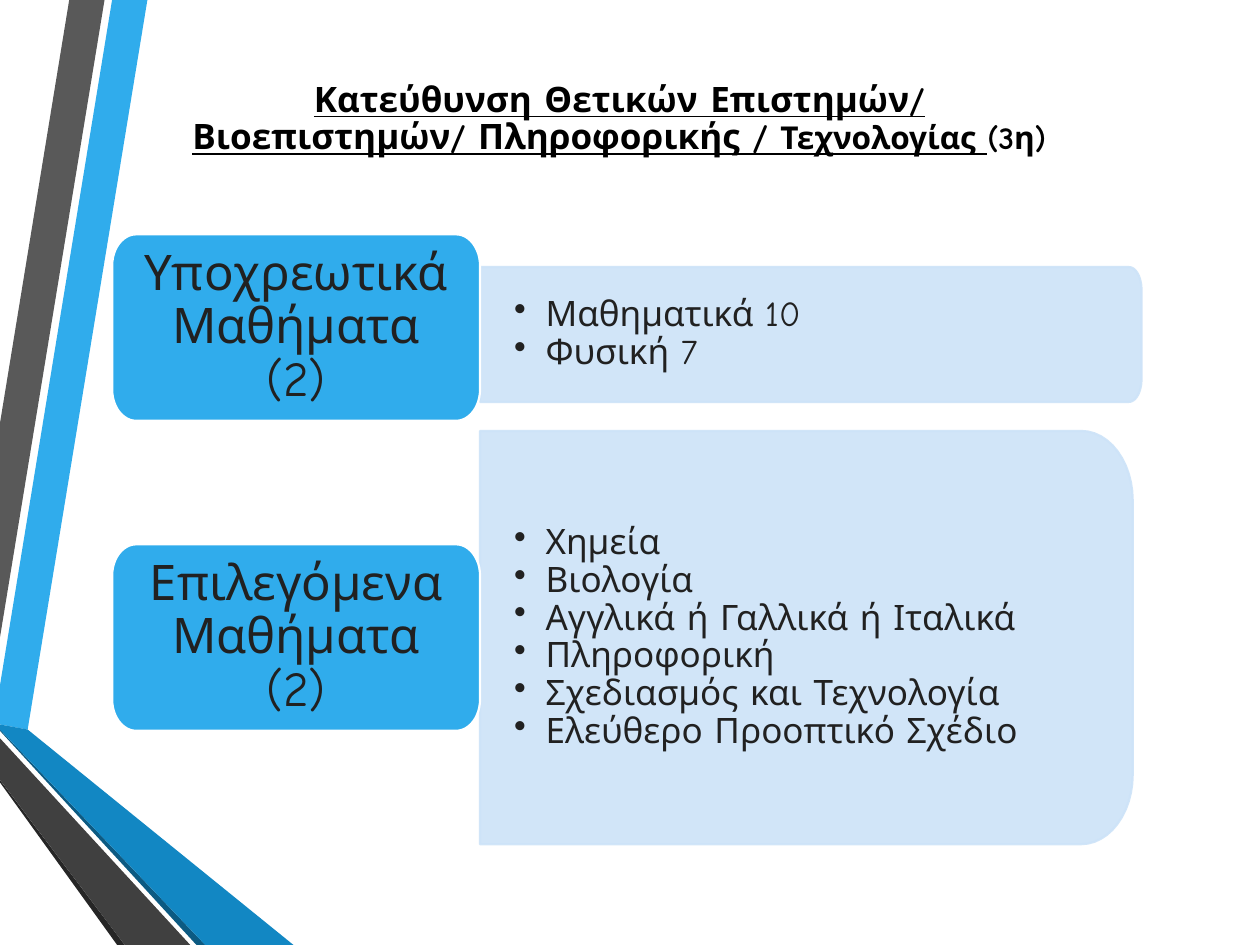
from math import cos, pi, sin

from lxml import etree
from pptx import Presentation
from pptx.dml.color import RGBColor
from pptx.enum.text import MSO_ANCHOR, MSO_AUTO_SIZE, PP_ALIGN
from pptx.oxml.ns import qn
from pptx.util import Inches, Pt

FONT = "Comic Neue"
BLUE, PALE_BLUE, DARK, WHITE = "30ACEC", "CDE3F8", "212121", "FFFFFF"

# Outlines of the ribbons on the left edge, from back to front
RIBBONS = [
    (BLUE, [(0, 5.44), (0, 5.75), (0.22, 5.79), (1.17, 0), (0.89, 0)]),
    ("595959", [(0.83, 0), (0.55, 0), (0, 3.36), (0, 5.06)]),
    ("262626", [(0, 6.19), (0, 6.21), (0.93, 7.5), (0.99, 7.5)]),
    ("0C5A82", [(0, 5.79), (0, 5.8), (1.56, 7.5), (1.63, 7.5)]),
    ("1287C3", [(0, 5.79), (1.63, 7.5), (2.33, 7.5), (0.22, 5.79), (0, 5.75)]),
    ("404040", [(0, 6.19), (0.99, 7.5), (1.51, 7.5), (0, 5.86)]),
]

# Heading, its box; subjects, their box, corner radii and insets
COURSE_ROWS = [
    ("Υποχρεωτικά Μαθήματα (2)", (0.89, 1.86, 2.92, 1.48),
     ["Μαθηματικά 10", "Φυσική 7"],
     (3.81, 2.12, 5.25, 1.07), (0.1, 0.18), (0.27, 0.17)),
    ("Επιλεγόμενα Μαθήματα (2)", (0.89, 4.32, 2.92, 1.48),
     ["Χημεία", "Βιολογία", "Αγγλικά ή Γαλλικά ή Ιταλικά", "Πληροφορική",
      "Σχεδιασμός και Τεχνολογία", "Ελεύθερο Προοπτικό Σχέδιο"],
     (3.81, 3.42, 5.18, 3.28), (0.41, 0.55), (0.27, 0.3)),
]


def color(value):
    return RGBColor.from_string(value)


def format_run(run, size, value):
    run.font.name = FONT
    run.font.size = Pt(size)
    run.font.color.rgb = color(value)


def add_outline(slide, points, fill, line=None):
    corners = [(Inches(x), Inches(y)) for x, y in points]
    builder = slide.shapes.build_freeform(*corners[0])
    builder.add_line_segments(corners[1:], close=True)
    shape = builder.convert_to_shape()
    shape.shadow.inherit = False
    shape.fill.solid()
    shape.fill.fore_color.rgb = color(fill)
    if line:
        shape.line.color.rgb = color(line)
        shape.line.width = Pt(1.25)
    else:
        shape.line.fill.background()
    return shape


def rounded_points(box, radii, round_left):
    """Outline of a box with elliptical corners, clockwise from the top right."""
    left, top, width, height = box
    radius_x, radius_y = radii
    right, bottom = left + width, top + height
    steps = 12
    corners = [(right - radius_x, top + radius_y, -pi / 2),
               (right - radius_x, bottom - radius_y, 0)]
    if round_left:
        corners += [(left + radius_x, bottom - radius_y, pi / 2),
                    (left + radius_x, top + radius_y, pi)]
    points = []
    for center_x, center_y, start in corners:
        for step in range(steps + 1):
            angle = start + pi / 2 * step / steps
            points.append((center_x + radius_x * cos(angle),
                           center_y + radius_y * sin(angle)))
    if not round_left:
        points += [(left, bottom), (left, top)]
    return points


def fill_text(shape, lines, size, align, inset_x, inset_y):
    frame = shape.text_frame
    frame.word_wrap = True
    frame.vertical_anchor = MSO_ANCHOR.MIDDLE
    frame.margin_left = frame.margin_right = Inches(inset_x)
    frame.margin_top = frame.margin_bottom = Inches(inset_y)
    frame.text = "\n".join(lines)
    for paragraph in frame.paragraphs:
        paragraph.alignment = align
        paragraph.line_spacing = 0.9
        format_run(paragraph.runs[0], size, DARK)


def add_bullet(paragraph):
    properties = paragraph._p.get_or_add_pPr()
    properties.set("marL", str(Inches(0.25)))
    properties.set("indent", str(-Inches(0.25)))
    etree.SubElement(properties, qn("a:buChar")).set("char", "•")


def make_translucent(color_format_parent, percent):
    for value in color_format_parent.iter(qn("a:srgbClr")):
        etree.SubElement(value, qn("a:alpha")).set("val", str(percent * 1000))


def add_title(slide, box):
    title = slide.shapes.title
    title.left, title.top, title.width, title.height = map(Inches, box)
    frame = title.text_frame
    frame.word_wrap = True
    frame.auto_size = MSO_AUTO_SIZE.NONE
    frame.vertical_anchor = MSO_ANCHOR.MIDDLE
    paragraph = frame.paragraphs[0]
    paragraph.alignment = PP_ALIGN.CENTER
    paragraph.line_spacing = 0.9
    parts = [("Κατεύθυνση Θετικών Επιστημών/", 20, True),
             ("Βιοεπιστημών/ Πληροφορικής / ", 20, True),
             ("Τεχνολογίας ", 18, True),
             ("(3η)", 18, False)]
    for index, (text, size, underline) in enumerate(parts):
        if index == 1:
            paragraph.add_line_break()
        run = paragraph.add_run()
        run.text = text
        format_run(run, size, "000000")
        run.font.bold = True
        run.font.underline = underline


def add_subjects(slide, subjects, box, radii, insets):
    panel = add_outline(slide, rounded_points(box, radii, False),
                        PALE_BLUE, PALE_BLUE)
    make_translucent(panel._element.spPr, 90)
    fill_text(panel, subjects, 20, PP_ALIGN.LEFT, *insets)
    for paragraph in panel.text_frame.paragraphs:
        add_bullet(paragraph)


def add_heading(slide, heading, box):
    label = add_outline(slide, rounded_points(box, (0.19, 0.25), True),
                        BLUE, WHITE)
    fill_text(label, [heading], 28, PP_ALIGN.CENTER, 0.23, 0.13)


def main():
    presentation = Presentation()
    presentation.slide_width = Inches(10)
    presentation.slide_height = Inches(7.5)
    slide = presentation.slides.add_slide(presentation.slide_layouts[5])

    # Ribbons
    for fill, points in RIBBONS:
        add_outline(slide, points, fill)

    # Title
    add_title(slide, (0.25, 0.23, 9.33, 1.44))

    # Course groups
    for heading, heading_box, subjects, box, radii, insets in COURSE_ROWS:
        add_subjects(slide, subjects, box, radii, insets)
        add_heading(slide, heading, heading_box)

    presentation.save("out.pptx")


if __name__ == "__main__":
    main()
